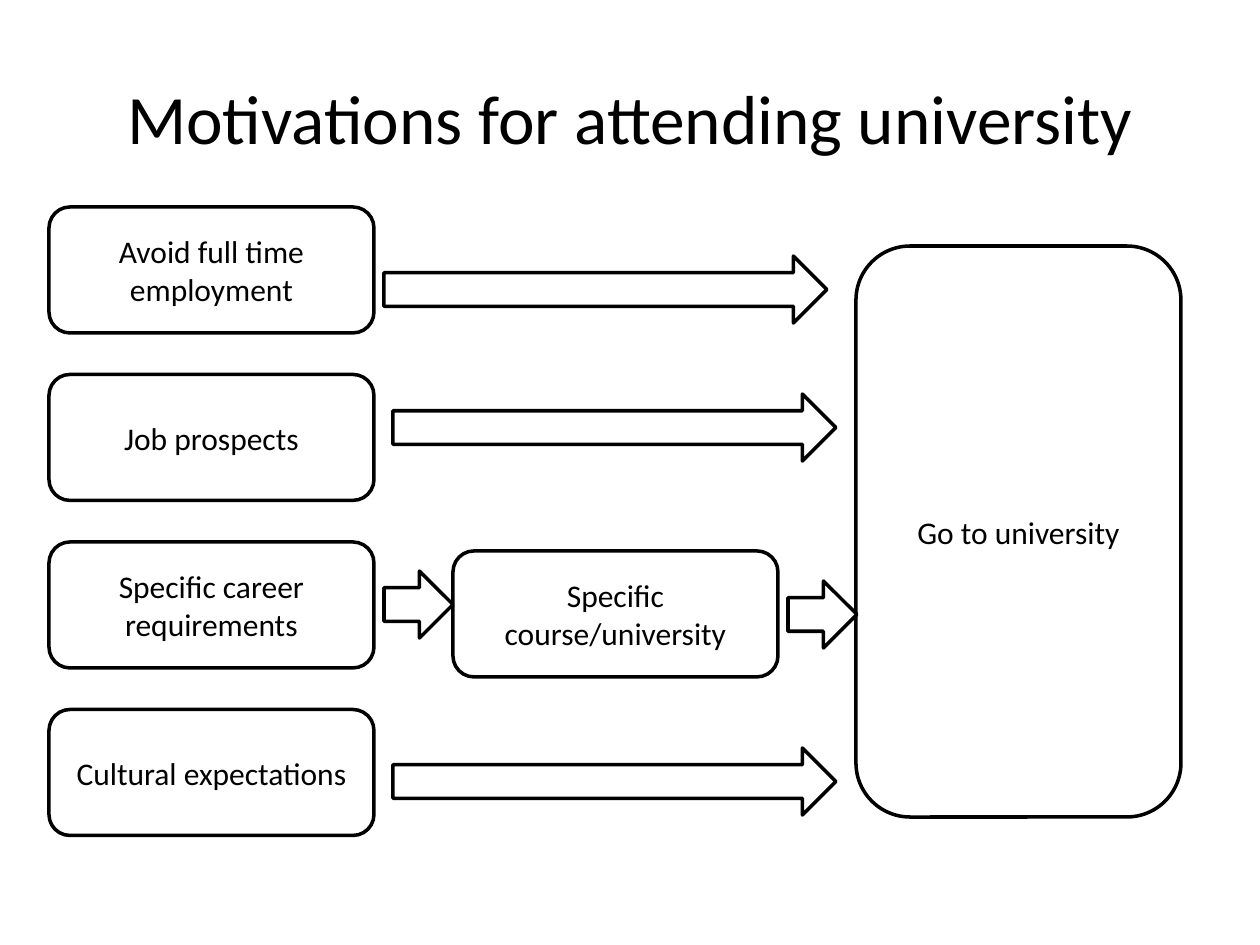
from pptx import Presentation
from pptx.dml.color import RGBColor
from pptx.enum.shapes import MSO_SHAPE
from pptx.enum.text import MSO_ANCHOR, PP_ALIGN
from pptx.util import Pt

SCALE = 914400 / 126
COLORS = {"ink": "000000", "paper": "FFFFFF"}
FONT = "Calibri"


def px(n):
    return round(n * SCALE)


class Deck:
    """Holds the style and the current slide."""

    def __init__(self, wide, high):
        self.prs = Presentation()
        self.prs.slide_width, self.prs.slide_height = px(wide), px(high)
        self.slide = self.prs.slides.add_slide(self.prs.slide_layouts[5])

    def color(self, name):
        return RGBColor.from_string(COLORS[name])

    def label(self, frame, text, size):
        frame.text = text
        frame.word_wrap = True
        frame.vertical_anchor = MSO_ANCHOR.MIDDLE
        par = frame.paragraphs[0]
        par.alignment = PP_ALIGN.CENTER
        par.font.name, par.font.size = FONT, Pt(size)
        par.font.color.rgb = self.color("ink")

    def title(self, text, x, y, w, h):
        head = self.slide.shapes.title
        head.left, head.top, head.width, head.height = map(px, (x, y, w, h))
        self.label(head.text_frame, text, 39.6)

    def shape(self, kind, x, y, w, h):
        item = self.slide.shapes.add_shape(kind, *map(px, (x, y, w, h)))
        item.shadow.inherit = False
        item.fill.solid()
        item.fill.fore_color.rgb = self.color("paper")
        item.line.color.rgb = self.color("ink")
        item.line.width = Pt(2)
        return item

    def box(self, text, x, y, w=325, h=126):
        item = self.shape(MSO_SHAPE.ROUNDED_RECTANGLE, x, y, w, h)
        self.label(item.text_frame, text, 18)

    def arrow(self, x, y, w, h=67):
        self.shape(MSO_SHAPE.RIGHT_ARROW, x, y, w, h)


def main():
    deck = Deck(1260, 945)
    deck.title("Motivations for attending university", 63, 38, 1134, 157)

    motives = ["Avoid full time employment", "Job prospects",
               "Specific career requirements", "Cultural expectations"]
    top, pitch = 207, 167.5
    for row, text in enumerate(motives):
        deck.box(text, 49, top + row * pitch)
    deck.box("Go to university", 856, 246, h=571)
    deck.box("Specific course/university", 453, 551)

    long, short = 443, 69
    for x, y, w in [(384, 256, long), (393, 748, long), (393, 394, long),
                    (384, 571, short), (788, 581, short)]:
        deck.arrow(x, y, w)

    deck.prs.save("out.pptx")


if __name__ == "__main__":
    main()
